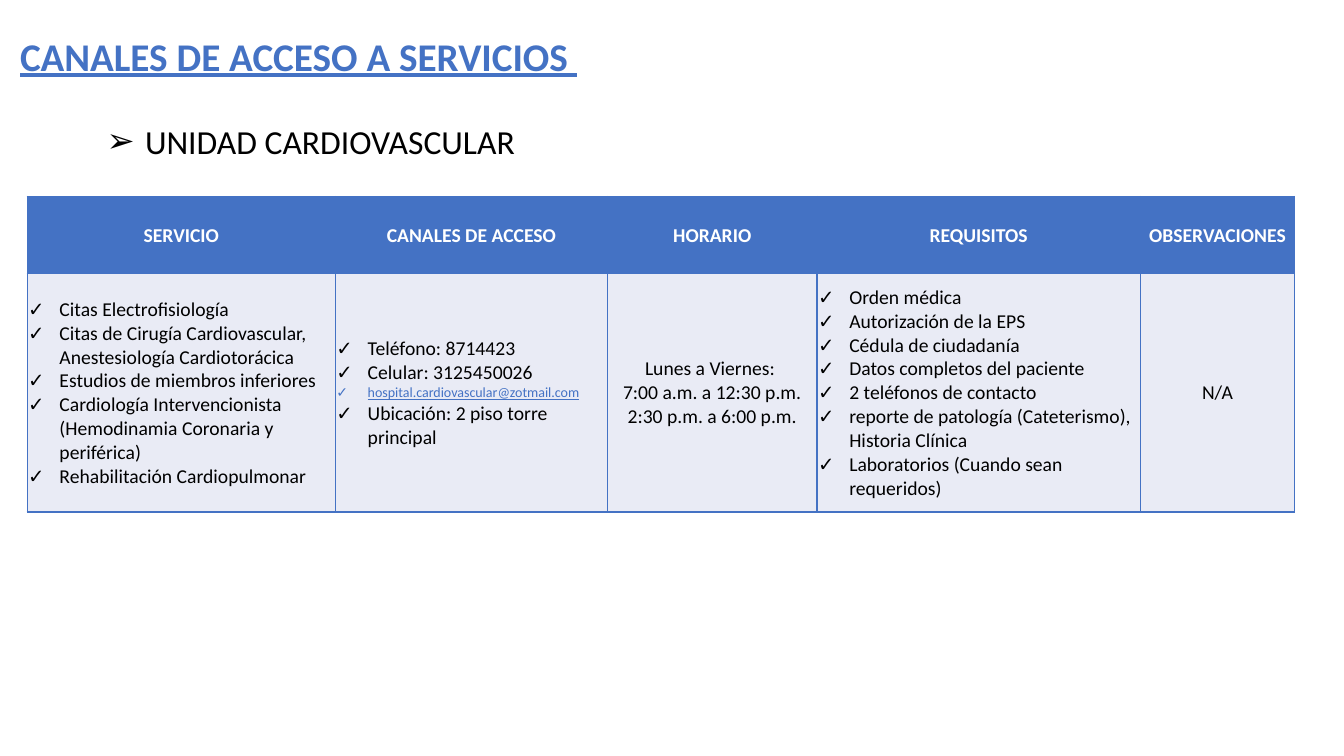
from copy import deepcopy

from lxml.etree import SubElement
from pptx import Presentation
from pptx.dml.color import RGBColor
from pptx.enum.text import MSO_ANCHOR, PP_ALIGN
from pptx.oxml.ns import qn
from pptx.util import Inches, Pt

FONT = "Calibri"
COLORS = {"blue": "4472C4", "pale": "E9EBF5", "black": "000000", "white": "FFFFFF"}
COLUMN_WIDTHS = [3.06, 2.7, 2.08, 3.21, 1.53]
ROW_HEIGHTS = [0.76, 2.37]
HEADINGS = ["SERVICIO", "CANALES DE ACCESO", "HORARIO", "REQUISITOS", "OBSERVACIONES"]
EMAIL = "hospital.cardiovascular@zotmail.com"
SERVICES = [
    "Citas Electrofisiología",
    "Citas de Cirugía Cardiovascular, Anestesiología Cardiotorácica",
    "Estudios de miembros inferiores",
    "Cardiología Intervencionista\n(Hemodinamia Coronaria y\nperiférica)",
    "Rehabilitación Cardiopulmonar",
]
CHANNELS = [
    "Teléfono: 8714423",
    "Celular: 3125450026",
    EMAIL,
    "Ubicación: 2 piso torre principal",
]
SCHEDULE = ["Lunes a Viernes: ", "7:00 a.m. a 12:30 p.m.\n2:30 p.m. a 6:00 p.m."]
REQUIREMENTS = [
    "Orden médica",
    "Autorización de la EPS",
    "Cédula de ciudadanía",
    "Datos completos del paciente",
    "2 teléfonos de contacto",
    "reporte de patología (Cateterismo), Historia Clínica",
    "Laboratorios (Cuando sean requeridos)",
]
DETAILS = [(SERVICES, "✓"), (CHANNELS, "✓"), (SCHEDULE, None), (REQUIREMENTS, "✓"), (["N/A"], None)]


def rgb(name):
    return RGBColor.from_string(COLORS[name])


def write(paragraph, text, size=14, color="black", bold=False, underline=False,
          align=PP_ALIGN.LEFT, bullet=None, indent=0.31, line_spacing=None):
    if bullet:
        properties = paragraph._p.get_or_add_pPr()
        properties.set("marL", str(Inches(indent)))
        properties.set("indent", str(-Inches(indent)))
        SubElement(properties, qn("a:buFont"), typeface=FONT)
        SubElement(properties, qn("a:buChar"), char=bullet)
    paragraph.text = text
    paragraph.alignment = align
    if line_spacing:
        paragraph.line_spacing = line_spacing
    for run in paragraph.runs:
        run.font.name = FONT
        run.font.size = Pt(size)
        run.font.bold = bold
        run.font.underline = underline
        run.font.color.rgb = rgb(color)
    for line_break in paragraph._p.findall(qn("a:br")):
        line_break.append(deepcopy(paragraph.runs[0]._r.rPr))


def add_heading(slide, left, top, width, height, text, anchor=MSO_ANCHOR.TOP, **style):
    frame = slide.shapes.add_textbox(
        Inches(left), Inches(top), Inches(width), Inches(height)).text_frame
    frame.word_wrap = True
    frame.vertical_anchor = anchor
    write(frame.paragraphs[0], text, **style)


def prepare_cell(cell, fill):
    cell.vertical_anchor = MSO_ANCHOR.MIDDLE
    cell.margin_left = cell.margin_right = cell.margin_top = Inches(0.01)
    cell.margin_bottom = 0
    properties = cell._tc.get_or_add_tcPr()
    for side in ("lnL", "lnR", "lnT", "lnB"):
        border = SubElement(properties, qn(f"a:{side}"), w=str(Pt(1)))
        border_fill = SubElement(border, qn("a:solidFill"))
        SubElement(border_fill, qn("a:srgbClr"), val=COLORS["blue"])
    cell.fill.solid()
    cell.fill.fore_color.rgb = rgb(fill)


def fill_details(cell, lines, bullet):
    prepare_cell(cell, "pale")
    frame = cell.text_frame
    for index, line in enumerate(lines):
        paragraph = frame.add_paragraph() if index else frame.paragraphs[0]
        style = {"size": 10, "color": "blue", "underline": True} if line == EMAIL else {}
        write(paragraph, line, bullet=bullet,
              align=PP_ALIGN.LEFT if bullet else PP_ALIGN.CENTER, **style)


def add_access_table(slide, left, top, width, height):
    table = slide.shapes.add_table(
        len(ROW_HEIGHTS), len(COLUMN_WIDTHS),
        Inches(left), Inches(top), Inches(width), Inches(height)).table
    for row, row_height in zip(table.rows, ROW_HEIGHTS):
        row.height = Inches(height * row_height / sum(ROW_HEIGHTS))
    for index, column_width in enumerate(COLUMN_WIDTHS):
        table.columns[index].width = Inches(width * column_width / sum(COLUMN_WIDTHS))
        heading = table.cell(0, index)
        prepare_cell(heading, "blue")
        write(heading.text_frame.paragraphs[0], HEADINGS[index], color="white", bold=True,
              align=PP_ALIGN.CENTER, line_spacing=1.07 if index == 1 else None)
        fill_details(table.cell(1, index), *DETAILS[index])


def main():
    presentation = Presentation()
    presentation.slide_width = Inches(13.33)
    presentation.slide_height = Inches(7.5)
    slide = presentation.slides.add_slide(presentation.slide_layouts[6])
    add_heading(slide, 0.1, 0.21, 9.15, 0.63, "CANALES DE ACCESO A SERVICIOS ",
                anchor=MSO_ANCHOR.BOTTOM, size=28, color="blue", bold=True,
                underline=True, line_spacing=0.9)
    add_heading(slide, 0.96, 1.15, 5.22, 0.5, "UNIDAD CARDIOVASCULAR",
                size=24, bullet="➢", indent=0.38)
    add_access_table(slide, 0.27, 1.95, 12.57, 3.13)
    presentation.save("out.pptx")


if __name__ == "__main__":
    main()
